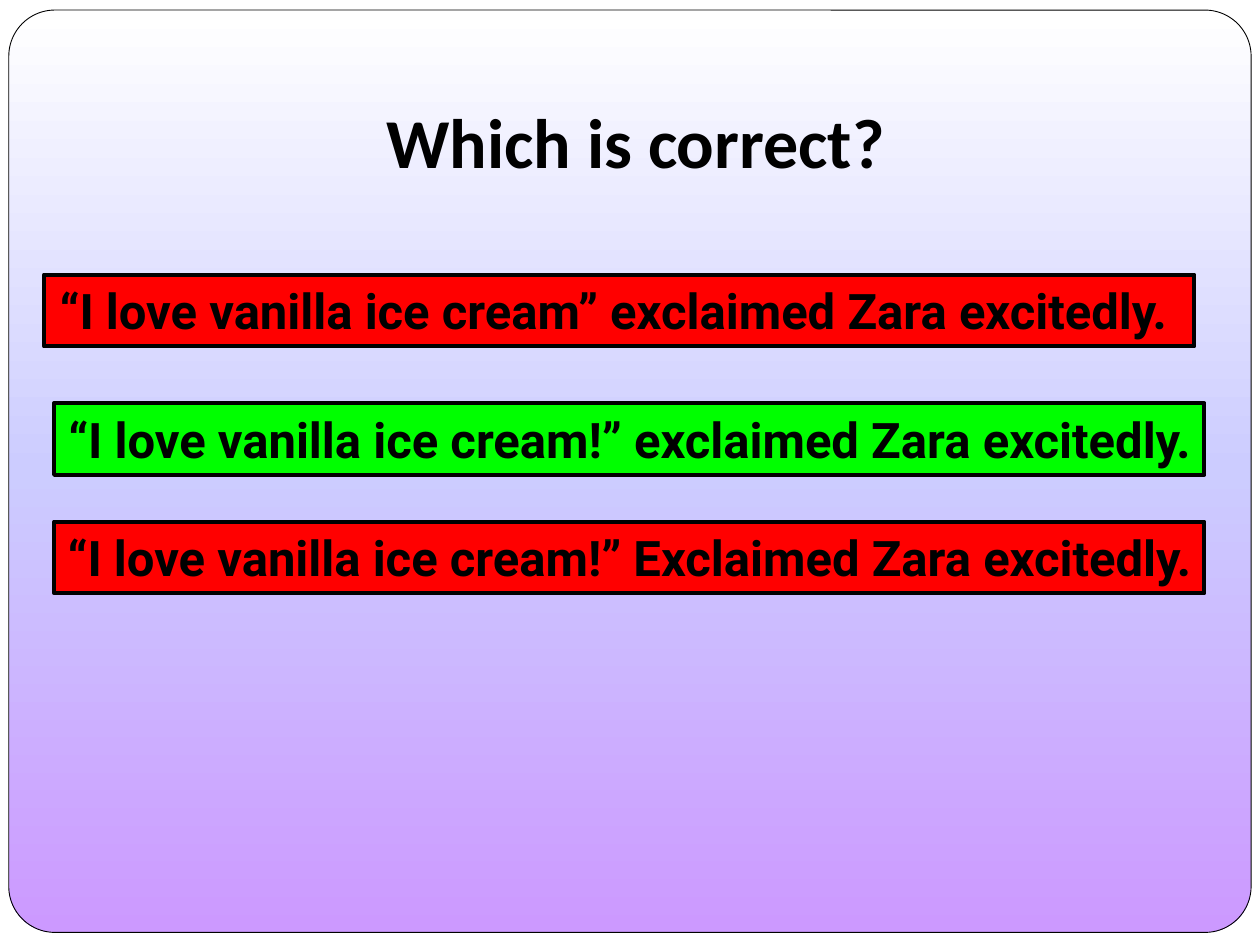
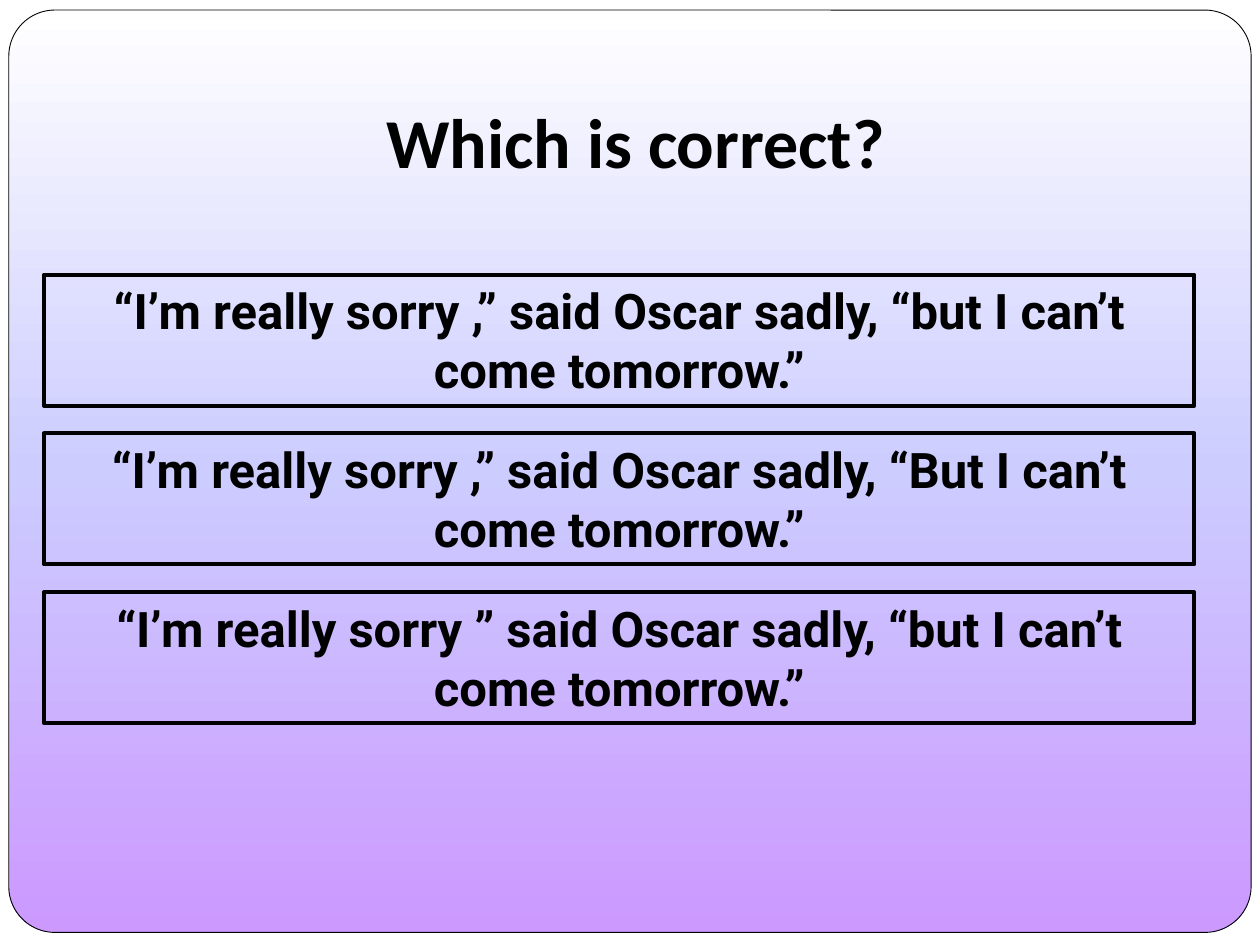
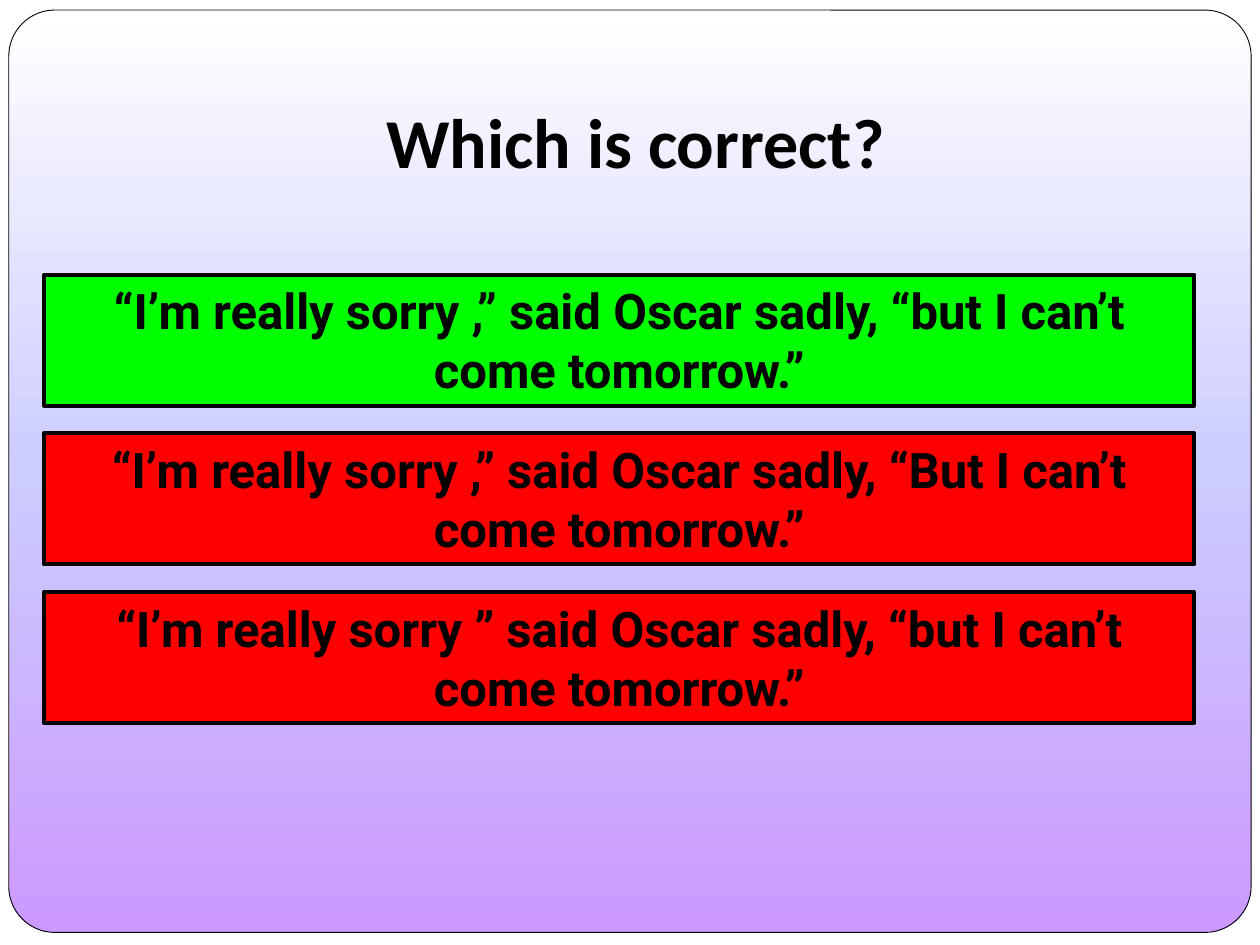
from copy import deepcopy

from pptx import Presentation
from pptx.dml.color import RGBColor
from pptx.enum.shapes import MSO_SHAPE
from pptx.enum.text import MSO_ANCHOR, MSO_AUTO_SIZE, PP_ALIGN
from pptx.util import Inches, Pt

RECT, ROUND_RECT = MSO_SHAPE.RECTANGLE, MSO_SHAPE.ROUNDED_RECTANGLE
TOP, BOTTOM = MSO_ANCHOR.TOP, MSO_ANCHOR.BOTTOM
FIXED, GROW = MSO_AUTO_SIZE.NONE, MSO_AUTO_SIZE.SHAPE_TO_FIT_TEXT
CENTER = PP_ALIGN.CENTER

BLACK, WHITE = "000000", "FFFFFF"
RIGHT_ANSWER, WRONG_ANSWER = "00FF00", "FF0000"
PANEL_STOPS = ((0, WHITE), (0.5, "CCCCFF"), (1, "CC99FF"))
TITLE = "Which is correct?"

ANSWER_LEFT, ANSWER_TOP, ANSWER_WIDTH = 0.35, 2.18, 9.13
ONE_LINE, TWO_LINES = 0.57, 1.04
ANSWER_STEP = 1.26

# Left, top, text and colour of each one-line answer
ICE_CREAM_ANSWERS = (
    (ANSWER_LEFT, ANSWER_TOP, "“I love vanilla ice cream” exclaimed Zara excitedly. ", WRONG_ANSWER),
    (0.43, 3.2, "“I love vanilla ice cream!” exclaimed Zara excitedly. ", RIGHT_ANSWER),
    (0.43, 4.14, "“I love vanilla ice cream!” Exclaimed Zara excitedly. ", WRONG_ANSWER),
)
SORRY_ANSWERS = (
    "“I’m really sorry ,” said Oscar sadly, “but I can’t come tomorrow.”",
    "“I’m really sorry ,” said Oscar sadly, “But I can’t come tomorrow.”",
    "“I’m really sorry ” said Oscar sadly, “but I can’t come tomorrow.”",
)


def rgb(value):
    return RGBColor.from_string(value)


class Deck:
    def __init__(self):
        self.prs = Presentation()
        self.prs.slide_width, self.prs.slide_height = Inches(10), Inches(7.5)
        self.layout = self.prs.slide_layouts[5]
        self.slide = None

    def new_slide(self):
        first = self.slide is None
        self.slide = self.prs.slides.add_slide(self.layout)
        if first:
            self.backdrop()
        self.title()

    def shape(self, kind, left, top, width, height, line_width):
        sp = self.slide.shapes.add_shape(
            kind, Inches(left), Inches(top), Inches(width), Inches(height))
        sp.shadow.inherit = False
        sp.line.color.rgb = rgb(BLACK)
        sp.line.width = Pt(line_width)
        return sp

    def backdrop(self):
        """Put the gradient panel on the layout, behind every slide."""
        fill = self.layout.background.fill
        fill.solid()
        fill.fore_color.rgb = rgb(WHITE)
        sp = self.shape(ROUND_RECT, 0.07, 0.08, 9.86, 7.32, 0.5)
        sp.adjustments[0] = 0.05
        sp.fill.gradient()
        sp.fill.gradient_angle = 270
        stop_list = sp.element.xpath(".//a:gsLst")[0]
        stop_list.append(deepcopy(stop_list[-1]))
        for stop, (position, color) in zip(sp.fill.gradient_stops, PANEL_STOPS):
            stop.position = position
            stop.color.rgb = rgb(color)
        self.layout.shapes.element.insert(2, sp.element)

    def text(self, tf, text, font, size, anchor, auto_size):
        tf.text = text
        tf.word_wrap = True
        tf.auto_size = auto_size
        tf.vertical_anchor = anchor
        p = tf.paragraphs[0]
        p.alignment = CENTER
        r = p.runs[0]
        r.font.name, r.font.size, r.font.bold = font, Pt(size), True
        r.font.color.rgb = rgb(BLACK)

    def title(self):
        sp = self.slide.shapes.title
        sp.left, sp.top = Inches(0.59), Inches(0.3)
        sp.width, sp.height = Inches(8.91), Inches(1.25)
        self.text(sp.text_frame, TITLE, "Calibri", 40, BOTTOM, FIXED)
        sp.text_frame.margin_bottom = Inches(0.1)

    def answer(self, left, top, height, text, color=None):
        sp = self.shape(RECT, left, top, ANSWER_WIDTH, height, 2.25)
        if color:
            sp.fill.solid()
            sp.fill.fore_color.rgb = rgb(color)
        else:
            sp.fill.background()
        self.text(sp.text_frame, text, "Roboto", 28, TOP, GROW)

    def sorry_answers(self, colors):
        for i, (text, color) in enumerate(zip(SORRY_ANSWERS, colors)):
            self.answer(ANSWER_LEFT, ANSWER_TOP + i * ANSWER_STEP, TWO_LINES, text, color)


def main():
    deck = Deck()

    # Ice cream question with its answers marked
    deck.new_slide()
    for left, top, text, color in ICE_CREAM_ANSWERS:
        deck.answer(left, top, ONE_LINE, text, color)

    # Apology question, first unmarked and then marked
    for colors in ((None, None, None), (RIGHT_ANSWER, WRONG_ANSWER, WRONG_ANSWER)):
        deck.new_slide()
        deck.sorry_answers(colors)

    deck.prs.save("out.pptx")


if __name__ == "__main__":
    main()
